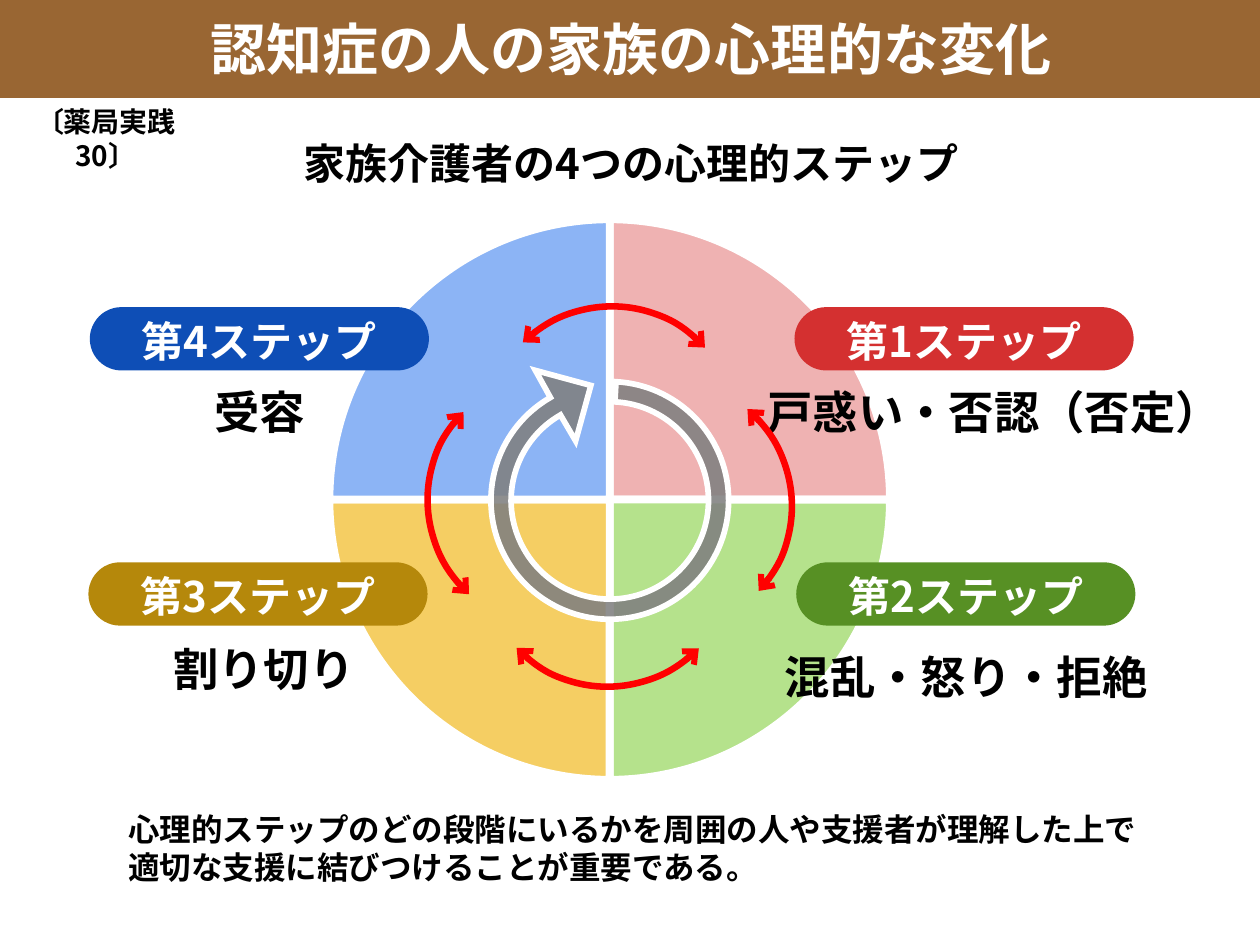
import math
from lxml import etree
from pptx import Presentation, util as u
from pptx.chart.data import CategoryChartData
from pptx.dml.color import RGBColor
from pptx.enum import chart as charts, lang, shapes, text
from pptx.oxml import parse_xml
from pptx.oxml.ns import nsdecls, qn

# Content (lengths in points)
TITLE = "認知症の人の家族の心理的な変化"
SUBTITLE = "家族介護者の4つの心理的ステップ"
TAG = "〔薬局実践30〕"
NOTE = ["心理的ステップのどの段階にいるかを周囲の人や支援者が理解した上で",
        "適切な支援に結びつけることが重要である。"]
# name, pill left/top, feeling, feeling left/top/width, pill colour, slice colour, opacity %
STEPS = [
    ("第1ステップ", 454, 175.5, "戸惑い・否認（否定）", 432, 216.4, 272.2, "D43030", "E78989", 65),
    ("第2ステップ", 455, 321.3, "混乱・怒り・拒絶", 405.6, 367.9, 293, "579024", "91D454", 67),
    ("第3ステップ", 50.5, 321.3, "割り切り", 65.9, 363.3, 169.9, "B5880B", "F0B510", 65),
    ("第4ステップ", 51.3, 175.5, "受容", 63.4, 216.4, 169.9, "0E4EB6", "518EF1", 66),
]
# left, top, rotation of each two-way arrow
SWINGS = [(275.3, 175.7, 318.2), (275.3, 248.4, 136.7),
          (307, 216.2, 43), (243.6, 215.3, 224.8)]

THEME = {
    "font": "Noto Sans CJK JP", "chart_font": "Arial",
    "text": "000000", "light": "FFFFFF", "band": "996633",
    "ring": "808080", "swing": "FF0000",
    "title": 32, "heading": 24, "feeling": 25.9, "note": 18, "tag": 16, "chart": 10,
}
CENTER = (348.5, 286)
CHART_BOX = (105.1, 115.2, 486.7, 340.6)
PIE_SIZE = 320.4


def color(value):
    return RGBColor.from_string(value)


def fill_solid(fill, value, opacity=100):
    fill.solid()
    fill.fore_color.rgb = color(value)
    if opacity < 100:
        node = fill._xPr.find(qn("a:solidFill"))[0]
        etree.SubElement(node, qn("a:alpha"), val=str(opacity * 1000))


def write(shape, lines, size, tone="text", align="CENTER", spacing=None):
    frame = shape.text_frame
    frame.text = "\n".join(lines)
    for paragraph in frame.paragraphs:
        paragraph.alignment = text.PP_ALIGN[align]
        if spacing:
            paragraph.line_spacing = u.Pt(spacing)
        for run in paragraph.runs:
            run.font.name = THEME["font"]
            run.font.size = u.Pt(THEME[size])
            run.font.bold = True
            run.font.color.rgb = color(THEME[tone])
            run.font.language_id = lang.MSO_LANGUAGE_ID.JAPANESE
            etree.SubElement(run.font._element, qn("a:ea"), typeface=THEME["font"])


def add_text(slide, box, lines, size, tone="text", align="CENTER", middle=False,
             grow=True, insets=None):
    shape = slide.shapes.add_textbox(*map(u.Pt, box))
    frame = shape.text_frame
    frame.word_wrap = True
    if grow:
        frame.auto_size = text.MSO_AUTO_SIZE.SHAPE_TO_FIT_TEXT
    if middle:
        frame.vertical_anchor = text.MSO_ANCHOR.MIDDLE
    if insets:
        frame.margin_left = frame.margin_right = u.Pt(insets[0])
        frame.margin_top = frame.margin_bottom = u.Pt(insets[1])
    write(shape, lines, size, tone, align)


def add_block(slide, kind, box, fill):
    shape = slide.shapes.add_shape(kind, *map(u.Pt, box))
    shape.shadow.inherit = False
    fill_solid(shape.fill, fill)
    shape.line.fill.background()
    return shape


def add_pie(slide):
    data = CategoryChartData()
    data.categories = [str(number + 1) for number in range(len(STEPS))]
    data.add_series("Series 1", [100 // len(STEPS)] * len(STEPS))
    chart = slide.shapes.add_chart(
        charts.XL_CHART_TYPE.PIE, *map(u.Pt, CHART_BOX), data).chart
    chart.has_legend = chart.has_title = False
    chart.font.name = THEME["chart_font"]
    chart.font.size = u.Pt(THEME["chart"])
    chart.font.color.rgb = color(THEME["text"])
    plot = chart.plots[0]
    plot.vary_by_categories = False
    for index, step in enumerate(STEPS):
        style = plot.series[0].points[index].format
        fill_solid(style.fill, step[-2], step[-1])
        style.line.color.rgb = color(THEME["light"])
        style.line.width = u.Pt(4.5)
    # Centre the circle inside the chart frame
    width, height = PIE_SIZE / CHART_BOX[2], PIE_SIZE / CHART_BOX[3]
    values = {"x": (1 - width) / 2, "y": (1 - height) / 2, "w": width, "h": height}
    places = "".join(f'<c:{key} val="{value:.4f}"/>' for key, value in values.items())
    layout = parse_xml(
        f'<c:layout {nsdecls("c")}><c:manualLayout><c:layoutTarget val="inner"/>'
        f'<c:xMode val="edge"/><c:yMode val="edge"/>{places}</c:manualLayout></c:layout>')
    area = chart._chartSpace.chart.plotArea
    for old in area.findall(qn("c:layout")):
        area.remove(old)
    area.insert(0, layout)


def curve_points(radius, start, stop, count=4):
    """Two control points and an end point for each Bezier piece of an arc."""
    step = math.radians(stop - start) / count
    pull = 4 / 3 * math.tan(step / 4)
    points = []
    for index in range(count):
        first = math.radians(start) + index * step
        for angle, shift in ((first, pull), (first + step, -pull), (first + step, 0)):
            points.append((CENTER[0] + radius * (math.cos(angle) - shift * math.sin(angle)),
                           CENTER[1] + radius * (math.sin(angle) + shift * math.cos(angle))))
    return points


def add_ring_arrow(slide):
    inner, outer = curve_points(56.4, 240, -87), curve_points(67.9, -87, 240)
    outer_start = curve_points(67.9, 240, -87)[-1]
    head = [(306, 211.7), (337.7, 220.3), (329, 252)]
    points = [curve_points(56.4, -87, 240)[-1], *inner, outer_start, *outer, *head]
    points = [(x * 100, y * 100) for x, y in points]
    builder = slide.shapes.build_freeform(*points[0], scale=u.Pt(1) / 100)
    builder.add_line_segments(points[1:], close=True)
    ring = builder.convert_to_shape()
    # Join each run of three points on the two arcs into one curve
    segments = list(ring._element.iter(qn("a:lnTo")))
    outer_first = len(inner) + 1
    for first in [*range(0, len(inner), 3),
                  *range(outer_first, outer_first + len(outer), 3)]:
        curve = etree.Element(qn("a:cubicBezTo"))
        segments[first].addprevious(curve)
        for segment in segments[first:first + 3]:
            curve.append(segment[0])
            segment.getparent().remove(segment)
    ring.shadow.inherit = False
    fill_solid(ring.fill, THEME["ring"], 88)
    ring.line.color.rgb = color(THEME["light"])
    ring.line.width = u.Pt(3.25)
    etree.SubElement(ring.line._get_or_add_ln(), qn("a:miter"), lim="800000")


def add_swing(slide, left, top, rotation):
    arc = slide.shapes.add_shape(
        shapes.MSO_SHAPE.ARC, *map(u.Pt, (left, top, 146.2, 143.3)))
    arc.adjustments[0], arc.adjustments[1] = 160.793, 0
    arc.rotation = rotation
    arc.shadow.inherit = False
    arc.fill.background()
    arc.line.color.rgb = color(THEME["swing"])
    arc.line.width = u.Pt(3.75)
    for end in ("a:headEnd", "a:tailEnd"):
        etree.SubElement(arc.line._get_or_add_ln(), qn(end), type="arrow", len="sm")


def main():
    presentation = Presentation()
    presentation.slide_width, presentation.slide_height = u.Pt(720), u.Pt(540)
    slide = presentation.slides.add_slide(presentation.slide_layouts[6])
    # Cycle: pie, feelings and ring arrow
    add_pie(slide)
    for _, _, _, feeling, left, top, width, *_ in STEPS:
        add_text(slide, (left, top, width, 37.4), [feeling], "feeling",
                 middle=True, insets=(5.8, 2.9))
    add_ring_arrow(slide)
    # Title band, subtitle and closing note
    add_block(slide, shapes.MSO_SHAPE.RECTANGLE, (0, 0, 720, 56), THEME["band"])
    add_text(slide, (31, 2.2, 659.5, 50.4), [TITLE], "title", "light",
             middle=True, grow=False)
    add_text(slide, (135, 74.9, 451.4, 36), [SUBTITLE], "heading")
    add_text(slide, (66.2, 459.4, 604, 51.1), NOTE, "note", align="LEFT")
    # Step pills
    for name, left, top, *_, pill_color, _, _ in STEPS:
        pill = add_block(slide, shapes.MSO_SHAPE.ROUNDED_RECTANGLE,
                         (left, top, 193.8, 36.2), pill_color)
        pill.adjustments[0] = 0.5
        pill.text_frame.word_wrap = False
        pill.text_frame.vertical_anchor = text.MSO_ANCHOR.MIDDLE
        write(pill, [name], "heading", "light", spacing=31)
    # Two-way arrows between neighbouring steps, then the corner tag
    for swing in SWINGS:
        add_swing(slide, *swing)
    add_text(slide, (0, 56.2, 121, 26.6), [TAG], "tag")
    presentation.save("out.pptx")


if __name__ == "__main__":
    main()
